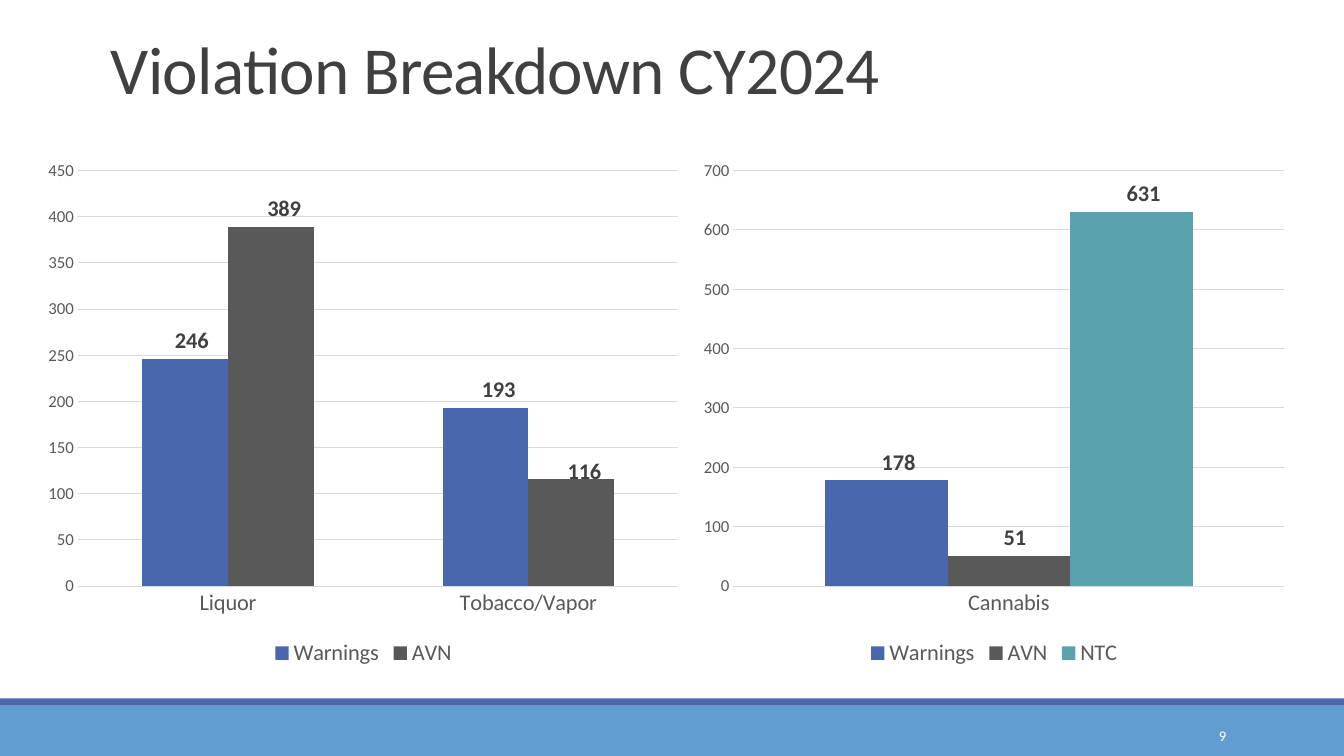
from lxml import etree
from pptx import Presentation
from pptx.chart.data import CategoryChartData
from pptx.dml.color import RGBColor
from pptx.enum.chart import XL_CHART_TYPE, XL_LABEL_POSITION, XL_LEGEND_POSITION, XL_TICK_MARK
from pptx.enum.shapes import MSO_SHAPE
from pptx.enum.text import MSO_ANCHOR, PP_ALIGN
from pptx.oxml.ns import qn
from pptx.util import Inches, Pt

RECTANGLE = MSO_SHAPE.RECTANGLE
COLUMN_CLUSTERED = XL_CHART_TYPE.COLUMN_CLUSTERED
OUTSIDE_END = XL_LABEL_POSITION.OUTSIDE_END
LEGEND_BOTTOM = XL_LEGEND_POSITION.BOTTOM
NO_TICK = XL_TICK_MARK.NONE
ANCHOR_BOTTOM = MSO_ANCHOR.BOTTOM
ANCHOR_MIDDLE = MSO_ANCHOR.MIDDLE
ALIGN_LEFT = PP_ALIGN.LEFT
ALIGN_RIGHT = PP_ALIGN.RIGHT

FONT = "Calibri"
BLUE = "4A66AC"
LIGHT_BLUE = "629DD1"
GRAY = "595959"
DARK_GRAY = "404040"
GRID_GRAY = "D9D9D9"
TEAL = "5AA2AE"
WHITE = "FFFFFF"
SERIES_COLORS = {"Warnings": BLUE, "AVN": GRAY, "NTC": TEAL}


def color(value):
    return RGBColor.from_string(value)


def style_font(font, size, font_color, bold=False):
    font.name = FONT
    font.size = Pt(size)
    font.bold = bold
    font.color.rgb = color(font_color)


def add_band(slide, top, height, fill_color):
    band = slide.shapes.add_shape(RECTANGLE, 0, Inches(top), Inches(13.33), Inches(height))
    band.shadow.inherit = False
    band.fill.solid()
    band.fill.fore_color.rgb = color(fill_color)
    band.line.fill.background()


def add_text(slide, box, text, size, text_color, anchor, alignment):
    shape = slide.shapes.add_textbox(*map(Inches, box))
    frame = shape.text_frame
    frame.word_wrap = True
    frame.vertical_anchor = anchor
    frame.text = text
    paragraph = frame.paragraphs[0]
    paragraph.alignment = alignment
    style_font(paragraph.runs[0].font, size, text_color)
    return paragraph


def add_title(slide, text):
    paragraph = add_text(slide, (1, 0.31, 11, 0.81), text, 48, DARK_GRAY, ANCHOR_BOTTOM, ALIGN_LEFT)
    paragraph.line_spacing = 0.85
    paragraph.runs[0].font._element.set("spc", "-50")


def shift_label(label_element, offset):
    layout = etree.Element(qn("c:layout"))
    manual = etree.SubElement(layout, qn("c:manualLayout"))
    for axis, distance in zip("xy", offset):
        etree.SubElement(manual, qn(f"c:{axis}")).set("val", str(distance))
    label_element.insert(1, layout)


def style_series(series, offsets):
    series.format.fill.solid()
    series.format.fill.fore_color.rgb = color(SERIES_COLORS[series.name])
    for index in range(len(offsets)):
        label = series.points[index].data_label
        style_font(label.font, 16, DARK_GRAY, True)
        label.position = OUTSIDE_END
    for element, offset in zip(series._element.iter(qn("c:dLbl")), offsets):
        shift_label(element, offset)


def style_axis(axis, size):
    style_font(axis.tick_labels.font, size, GRAY)
    axis.major_tick_mark = NO_TICK
    axis.minor_tick_mark = NO_TICK
    axis.format.line.fill.background()


def add_violation_chart(slide, left, width, categories, values, offsets, maximum, step):
    data = CategoryChartData()
    data.categories = categories
    for name, counts in values.items():
        data.add_series(name, counts)
    frame = slide.shapes.add_chart(
        COLUMN_CLUSTERED, Inches(left), Inches(1.49), Inches(width), Inches(5.17), data
    )
    chart = frame.chart
    style_font(chart.font, 10, "000000")
    chart.has_title = False
    chart.has_legend = True
    chart.legend.position = LEGEND_BOTTOM
    chart.legend.include_in_layout = False
    style_font(chart.legend.font, 16, GRAY)
    style_axis(chart.category_axis, 16)
    value_axis = chart.value_axis
    style_axis(value_axis, 12)
    value_axis.minimum_scale = 0
    value_axis.maximum_scale = maximum
    value_axis.major_unit = step
    grid_line = value_axis.major_gridlines.format.line
    grid_line.color.rgb = color(GRID_GRAY)
    grid_line.width = Pt(0.75)
    plot = chart.plots[0]
    plot.gap_width = 150
    plot.overlap = 0
    plot.vary_by_categories = False
    for series in plot.series:
        style_series(series, offsets[series.name])


def main():
    presentation = Presentation()
    presentation.slide_width = Inches(13.33)
    presentation.slide_height = Inches(7.5)
    slide = presentation.slides.add_slide(presentation.slide_layouts[6])
    add_band(slide, 7, 0.5, LIGHT_BLUE)
    add_band(slide, 6.93, 0.07, BLUE)
    add_title(slide, "Violation Breakdown CY2024")
    add_violation_chart(
        slide, 0.35, 6.51, ["Liquor", "Tobacco/Vapor"],
        {"Warnings": [246, 193], "AVN": [389, 116]},
        {"Warnings": [(0.01, 0), (0.02, 0)], "AVN": [(0.02, 0), (0.02, 0.02)]},
        450, 50,
    )
    add_violation_chart(
        slide, 6.86, 6, ["Cannabis"],
        {"Warnings": [178], "AVN": [51], "NTC": [631]},
        {"Warnings": [(0.02, 0)], "AVN": [(0.01, 0)], "NTC": [(0.02, 0)]},
        700, 100,
    )
    add_text(slide, (10.83, 7.1, 1.43, 0.4), "9", 10.5, WHITE, ANCHOR_MIDDLE, ALIGN_RIGHT)
    presentation.save("out.pptx")


if __name__ == "__main__":
    main()
